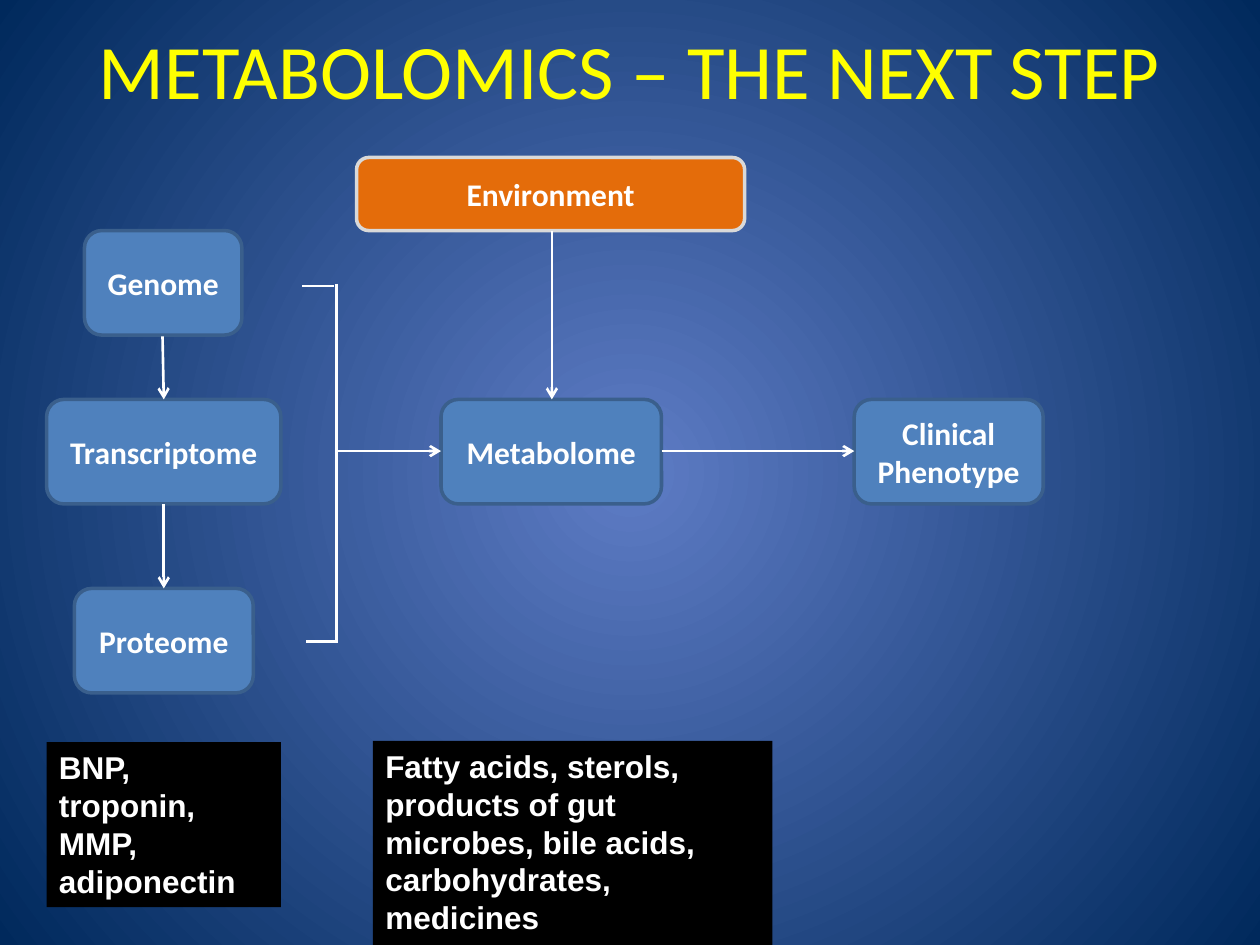
from lxml import etree
from pptx import Presentation, util as u
from pptx.dml.color import RGBColor
from pptx.enum import shapes, text
from pptx.oxml.ns import qn

TITLE = "METABOLOMICS – THE NEXT STEP"
BLUE, BLUE_EDGE = "4F81BD", "3A5F8C"
WHITE, BLACK, YELLOW = "FFFFFF", "000000", "FFFF00"
BOXES = [
    ("Genome", (0.67, 1.83, 1.25, 0.83), BLUE, BLUE_EDGE),
    ("Environment", (2.83, 1.25, 3.08, 0.58), "E46C0A", "D9D9D9"),
    ("Transcriptome", (0.37, 3.17, 1.86, 0.83), BLUE, BLUE_EDGE),
    ("Proteome", (0.59, 4.67, 1.42, 0.83), BLUE, BLUE_EDGE),
    ("Metabolome", (3.5, 3.17, 1.75, 0.83), BLUE, BLUE_EDGE),
    ("Clinical\nPhenotype", (6.78, 3.17, 1.5, 0.83), BLUE, BLUE_EDGE),
]
NOTES = [
    ("BNP, troponin, MMP, adiponectin", (0.37, 5.89, 1.86, 1.31)),
    ("Fatty acids, sterols, products of gut microbes, bile acids, "
     "carbohydrates, medicines", (2.96, 5.88, 3.17, 1.62)),
]
ARROWS = [
    (1.29, 2.67, 1.3, 3.17),
    (1.3, 4, 1.3, 4.67),
    (4.38, 1.83, 4.38, 3.17),
    (2.67, 3.58, 3.5, 3.58),
    (5.25, 3.58, 6.78, 3.58),
]
BRACKET = [
    (2.67, 2.25, 2.67, 5.08),
    (2.43, 5.09, 2.68, 5.09),
    (2.4, 2.27, 2.65, 2.27),
]


def color(value):
    return RGBColor.from_string(value)


def inches(values):
    return [u.Inches(v) for v in values]


def write(tf, content, size, font, ink, bold, align):
    tf.word_wrap = True
    tf.text = content
    for p in tf.paragraphs:
        p.alignment = align
        p.font.size, p.font.name, p.font.bold = u.Pt(size), font, bold
        p.font.color.rgb = color(ink)


def add_box(s, kind, at, fill, edge=None):
    sp = s.shapes.add_shape(kind, *inches(at))
    sp.shadow.inherit = False
    sp.fill.solid()
    sp.fill.fore_color.rgb = color(fill)
    if edge:
        sp.line.color.rgb = color(edge)
        sp.line.width = u.Pt(2)
    else:
        sp.line.fill.background()
    return sp.text_frame


def add_line(s, ends, arrow=False):
    line = s.shapes.add_connector(shapes.MSO_CONNECTOR.STRAIGHT, *inches(ends))
    line.line.color.rgb = color(WHITE)
    line.line.width = u.Pt(1.5)
    if arrow:
        etree.SubElement(line.line._get_or_add_ln(), qn("a:tailEnd"), type="arrow")
    etree.SubElement(line._element.spPr, qn("a:effectLst"))


def paint_background(s, inner, outer):
    fill = s.background.fill
    fill.gradient()
    for stop, value in zip(fill.gradient_stops, (inner, outer)):
        stop.color.rgb = color(value)
    grad = s._element.find(".//" + qn("p:bgPr")).find(qn("a:gradFill"))
    lin = grad.find(qn("a:lin"))
    radial = etree.Element(qn("a:path"), path="circle")
    etree.SubElement(radial, qn("a:fillToRect"), dict.fromkeys("ltrb", "50000"))
    grad.replace(lin, radial)


def main():
    """Build the metabolomics flow slide."""
    prs = Presentation()
    prs.slide_width, prs.slide_height = inches((10, 7.5))
    s = prs.slides.add_slide(prs.slide_layouts[5])
    paint_background(s, "5E7CC5", "00295C")

    title = s.shapes.title
    title.left, title.top, title.width, title.height = inches((0.5, -0.08, 9, 1.25))
    title.text_frame.vertical_anchor = text.MSO_ANCHOR.MIDDLE
    write(title.text_frame, TITLE, 44, "Calibri", YELLOW, False, text.PP_ALIGN.CENTER)

    for label, at, fill, edge in BOXES:
        tf = add_box(s, shapes.MSO_SHAPE.ROUNDED_RECTANGLE, at, fill, edge)
        tf.vertical_anchor = text.MSO_ANCHOR.MIDDLE
        write(tf, label, 18, "Calibri", WHITE, True, text.PP_ALIGN.CENTER)
    for note, at in NOTES:
        tf = add_box(s, shapes.MSO_SHAPE.RECTANGLE, at, BLACK)
        tf.vertical_anchor = text.MSO_ANCHOR.TOP
        tf.auto_size = text.MSO_AUTO_SIZE.SHAPE_TO_FIT_TEXT
        write(tf, note, 18, "Arial", WHITE, True, text.PP_ALIGN.LEFT)
    for ends in ARROWS:
        add_line(s, ends, arrow=True)
    for ends in BRACKET:
        add_line(s, ends)
    prs.save("out.pptx")


if __name__ == "__main__":
    main()
